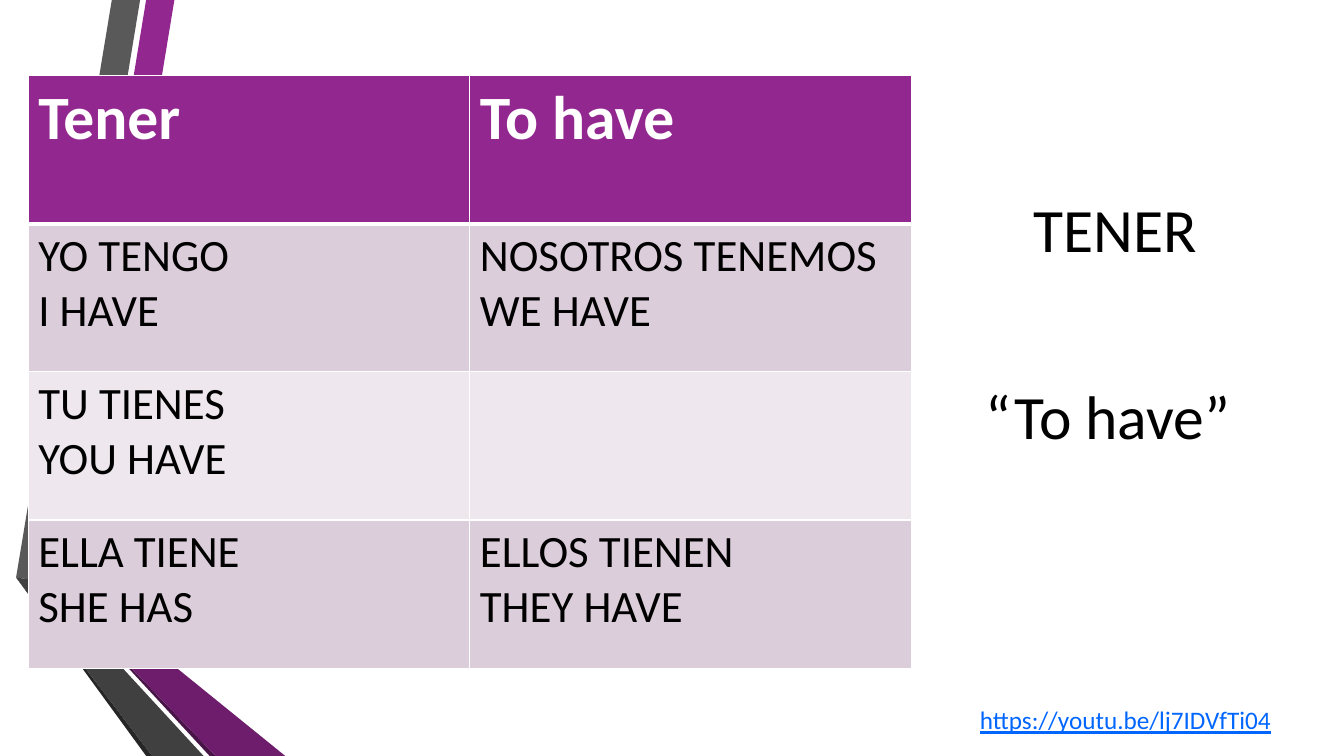
import pptx
import pptx.dml.color
import pptx.enum.text
import pptx.oxml
import pptx.oxml.ns
import pptx.util
from pptx.util import Inches

FONT = "Calibri"
PURPLE, WHITE, BLACK = "92278F", "FFFFFF", "000000"
BAND_FILLS = ["EEE8EE", "DCCDDB"]

RIBBONS = [
    (PURPLE, [(0.5, 5.78), (0.77, 5.83), (1.73, 0), (1.45, 0)]),
    ("595959", [(1.39, 0), (1.11, 0), (0.16, 5.73), (0.44, 5.77)]),
    ("262626", [(0.16, 5.73), (1.45, 7.5), (1.51, 7.5)]),
    ("491447", [(0.5, 5.79), (2.08, 7.5), (2.14, 7.5)]),
    ("6D1D6B", [(0.5, 5.79), (2.14, 7.5), (2.83, 7.5), (0.77, 5.83), (0.5, 5.78)]),
    ("404040", [(2.02, 7.5), (0.48, 5.83), (0.43, 5.78), (0.44, 5.77),
                (0.16, 5.73), (1.51, 7.5)]),
]

CONJUGATIONS = [
    ["Tener", "To have"],
    ["YO TENGO\nI HAVE", "NOSOTROS TENEMOS\nWE HAVE"],
    ["TU TIENES\nYOU HAVE", ""],
    ["ELLA TIENE\nSHE HAS", "ELLOS TIENEN\nTHEY HAVE"],
]


def rgb(color):
    """Return the colour for a hex string."""
    return pptx.dml.color.RGBColor.from_string(color)


def style_text(text_frame, size, color, bold=False):
    """Set the font of every paragraph in a text frame."""
    for paragraph in text_frame.paragraphs:
        font = paragraph.font
        font.name, font.size, font.bold = FONT, pptx.util.Pt(size), bold
        font.color.rgb = rgb(color)


def add_ribbon(slide, color, points):
    """Draw one flat polygon of the ribbon decoration."""
    corners = [(Inches(x), Inches(y)) for x, y in points]
    builder = slide.shapes.build_freeform(*corners[0], scale=1.0)
    builder.add_line_segments(corners[1:], close=True)
    shape = builder.convert_to_shape()
    shape.shadow.inherit = False
    shape.fill.solid()
    shape.fill.fore_color.rgb = rgb(color)
    shape.line.fill.background()


def add_border(cell, side, width):
    """Add a white border to one side of a cell."""
    cell._tc.get_or_add_tcPr().append(pptx.oxml.parse_xml(
        f'<a:ln{side} {pptx.oxml.ns.nsdecls("a")} w="{pptx.util.Pt(width)}">'
        f'<a:solidFill><a:srgbClr val="{WHITE}"/></a:solidFill></a:ln{side}>'))


def add_conjugation_table(slide):
    """Add the verb table with a header and banded rows."""
    table = slide.shapes.add_table(
        len(CONJUGATIONS), 2, Inches(0.28), Inches(0.75),
        Inches(8.76), Inches(5.88)).table
    table.horz_banding = False
    for row_index, texts in enumerate(CONJUGATIONS):
        header = row_index == 0
        table.rows[row_index].height = Inches(1.47)
        for column_index, text in enumerate(texts):
            cell = table.cell(row_index, column_index)
            cell.text = text
            style_text(cell.text_frame, 44 if header else 32,
                       WHITE if header else BLACK, header)
            top, bottom = {0: (1, 3), 1: (3, 1)}.get(row_index, (1, 1))
            for side, width in zip("LRTB", (1, 1, top, bottom)):
                add_border(cell, side, width)
            cell.fill.solid()
            cell.fill.fore_color.rgb = rgb(
                PURPLE if header else BAND_FILLS[row_index % 2])


def add_text(slide, text, left, top, width, height, size, color):
    """Add a wrapping text box and return its text frame."""
    text_frame = slide.shapes.add_textbox(
        Inches(left), Inches(top), Inches(width), Inches(height)).text_frame
    text_frame.word_wrap = True
    text_frame.text = text
    style_text(text_frame, size, color)
    return text_frame


def main():
    """Build and save the slide."""
    presentation = pptx.Presentation()
    presentation.slide_width = Inches(13.33)
    presentation.slide_height = Inches(7.5)
    slide = presentation.slides.add_slide(presentation.slide_layouts[6])
    for color, points in RIBBONS:
        add_ribbon(slide, color, points)
    add_conjugation_table(slide)

    verb = add_text(slide, "TENER\n“To have” ", 9.31, 1.13, 3.5, 3.6, 44, BLACK)
    verb.margin_top = Inches(0.76)
    for paragraph in verb.paragraphs:
        paragraph.alignment = pptx.enum.text.PP_ALIGN.CENTER
    verb.paragraphs[1].space_before = pptx.util.Pt(81)

    link = add_text(slide, "https://youtu.be/lj7IDVfTi04",
                    9.62, 6.94, 3.7, 0.4, 18, "0066FF")
    link.paragraphs[0].font.underline = True
    presentation.save("out.pptx")


if __name__ == "__main__":
    main()
